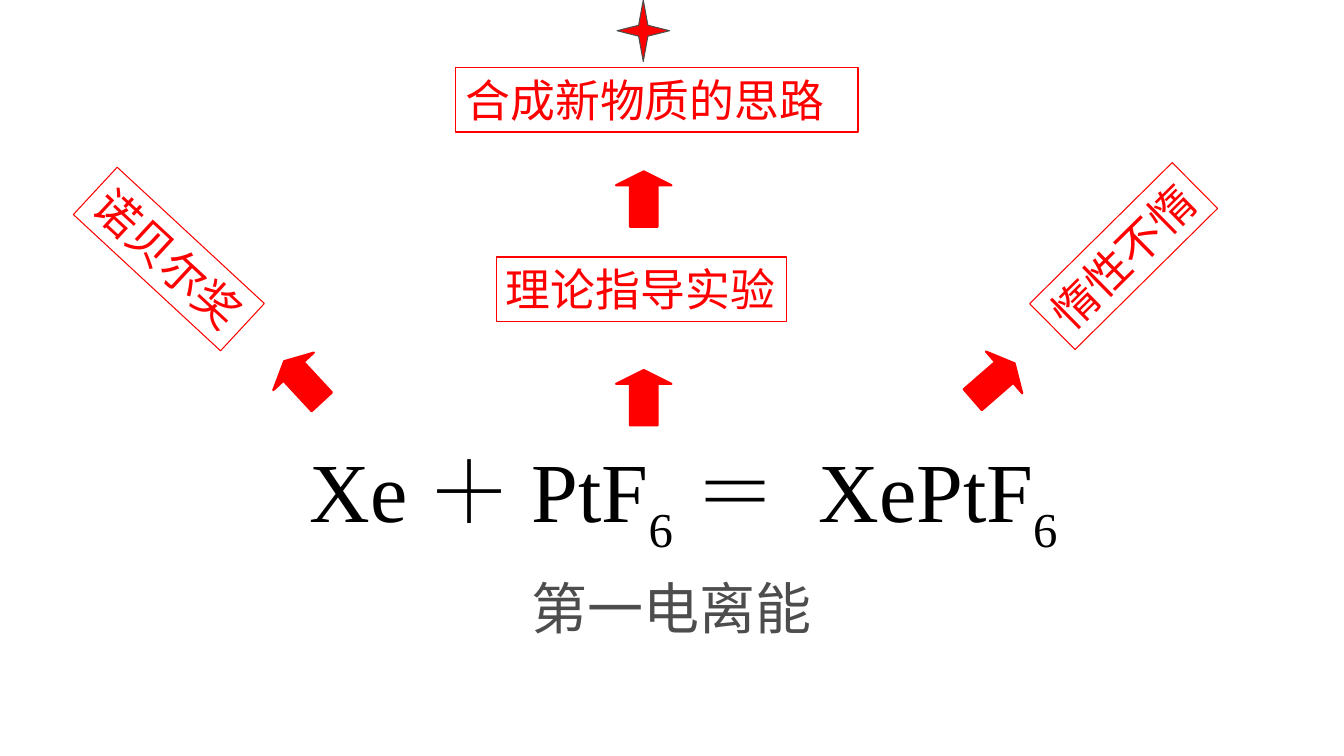
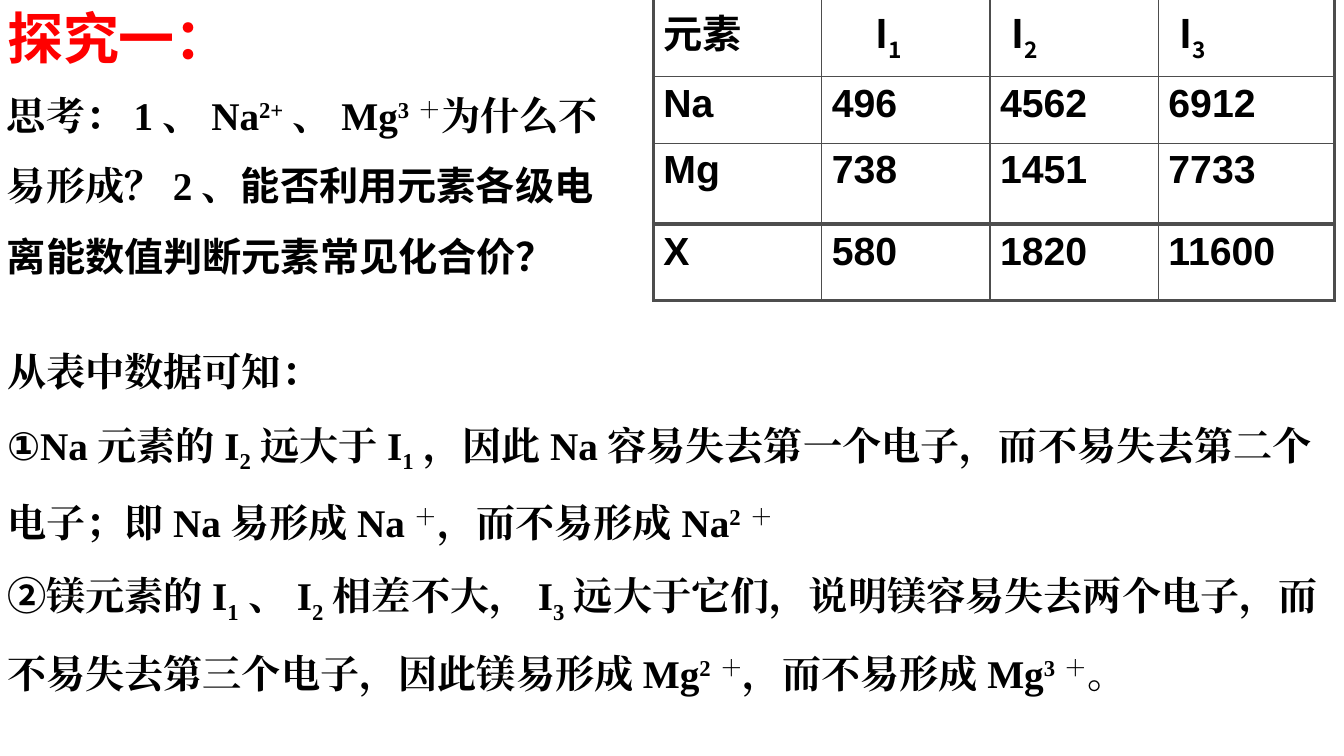
"""Build two chemistry slides on ionisation energy."""
from lxml.etree import SubElement
from pptx import Presentation
from pptx.dml.color import RGBColor
from pptx.enum.shapes import MSO_SHAPE
from pptx.enum.text import MSO_ANCHOR, PP_ALIGN
from pptx.oxml.ns import qn
from pptx.util import Inches, Pt

RED = RGBColor(0xFF, 0x00, 0x00)
GREY = RGBColor(0x4D, 0x4D, 0x4D)
BLACK = RGBColor(0x00, 0x00, 0x00)
WHITE = RGBColor(0xFF, 0xFF, 0xFF)
SANS, SERIF, CJK = "Arial", "Times New Roman", "Noto Sans CJK SC"
BASELINES = {"_": -25000, "^": 30000, "~": -30000}
THIN, THICK = 1, 2.25
EDGE = -0.03

FORMULA = "Xe＋PtF~{6}＝ XePtF~{6}"
QUESTION = "思考：1、Na^{2+}、Mg^{3＋}为什么不易形成？2、@{能否利用元素各级电离能数值判断元素常见化合价？}"
FINDINGS = [
    "从表中数据可知：",
    "@{①}Na元素的I_{2}远大于I_{1}，因此Na容易失去第一个电子，而不易失去第二个电子；"
    "即Na易形成Na^{＋}，而不易形成Na^{2＋}",
    "@{②}镁元素的I_{1}、I_{2}相差不大，I_{3}远大于它们，说明镁容易失去两个电子，"
    "而不易失去第三个电子，因此镁易形成Mg^{2＋}，而不易形成Mg^{3＋}。",
]
ENERGIES = [
    ["元素", "I_{1}", "I_{2}", "I_{3}"],
    ["Na", "496", "4562", "6912"],
    ["Mg", "738", "1451", "7733"],
]
UNKNOWN = [["X", "580", "1820", "11600"]]
COLUMNS = [1.67, 1.67, 1.67, 1.75]
HEADER_INDENTS = [0, 0.43, 0.11, 0.11]


def inches(*lengths):
    """Convert lengths to slide units."""
    return [Inches(length) for length in lengths]


def set_asian_font(properties, name):
    """Use the same font name for East Asian characters."""
    SubElement(properties, qn("a:ea")).set("typeface", name)


def add_span(para, text, mark=""):
    """Add a run, raised, lowered or in the sans font as its mark says."""
    if not text:
        return
    span = para.add_run()
    span.text = text
    if mark == "@":
        span.font.name = SANS
        set_asian_font(span.font._element, SANS)
    elif mark:
        span.font._element.set("baseline", str(BASELINES[mark]))


def write(para, markup, size, color, font=SANS, bold=False):
    """Write marked-up text in one paragraph style."""
    for piece in markup.split("}"):
        plain, brace, marked = piece.partition("{")
        add_span(para, plain[:-1] if brace else plain)
        if brace:
            add_span(para, marked, plain[-1])
    style = para.font
    style.name, style.size, style.bold = font, Pt(size), bold
    style.color.rgb = color
    set_asian_font(para._p.pPr.find(qn("a:defRPr")), font)


def place(holder, left, top, width, height):
    """Move a placeholder."""
    holder.left, holder.top, holder.width, holder.height = inches(left, top, width, height)
    holder.text_frame.vertical_anchor = MSO_ANCHOR.TOP


def remove_bullet(para, hanging=0):
    """Replace the list bullet by a plain hanging indent."""
    properties = para._p.get_or_add_pPr()
    properties.set("marL", str(Inches(hanging)))
    properties.set("indent", str(-Inches(hanging)))
    SubElement(properties, qn("a:buNone"))


def add_text(page, area, markup, size, color, font=SANS, bold=False, wrap=True):
    """Add a text box and return it."""
    box = page.shapes.add_textbox(*inches(*area))
    box.text_frame.word_wrap = wrap
    write(box.text_frame.paragraphs[0], markup, size, color, font, bold)
    return box


def add_label(page, area, text, rotation=0, font=SANS):
    """Add a red outlined label."""
    box = add_text(page, area, text, 32, RED, font, wrap=False)
    box.rotation = rotation
    box.line.color.rgb = RED
    box.line.width = Pt(0.75)
    return box


def add_mark(page, kind, area, line, width, adjustments, rotation=0):
    """Add a red preset shape."""
    mark = page.shapes.add_shape(kind, *inches(*area))
    mark.shadow.inherit = False
    mark.rotation = rotation
    for index, value in enumerate(adjustments):
        mark.adjustments[index] = value
    mark.fill.solid()
    mark.fill.fore_color.rgb = RED
    mark.line.color.rgb = line
    mark.line.width = Pt(width)


def set_borders(cell, weights):
    """Draw the left, right, top and bottom borders of a cell."""
    properties = cell._tc.get_or_add_tcPr()
    for position, (side, weight) in enumerate(zip("LRTB", weights)):
        line = properties.makeelement(qn(f"a:ln{side}"), {"w": str(Pt(weight))})
        fill = SubElement(line, qn("a:solidFill"))
        SubElement(fill, qn("a:srgbClr")).set("val", str(GREY))
        properties.insert(position, line)


def add_grid(page, top, rows, heights, header=False):
    """Add a table with thin inner and thick outer borders."""
    last_row, last_column = len(rows) - 1, len(COLUMNS) - 1
    area = inches(6.48, top, sum(COLUMNS), sum(heights))
    table = page.shapes.add_table(len(rows), len(COLUMNS), *area).table
    for column, width in zip(table.columns, COLUMNS):
        column.width = Inches(width)
    for r, (values, height) in enumerate(zip(rows, heights)):
        table.rows[r].height = Inches(height)
        for c, value in enumerate(values):
            cell = table.cell(r, c)
            cell.fill.solid()
            cell.fill.fore_color.rgb = WHITE
            is_header = header and r == 0
            if is_header:
                cell.margin_left = Inches(0.1 + HEADER_INDENTS[c])
            font = CJK if is_header else SANS
            write(cell.text_frame.paragraphs[0], value, 28, BLACK, font, True)
            outer = (c == 0, c == last_column, r == 0, r == last_row)
            set_borders(cell, [THICK if edge else THIN for edge in outer])


def build_reaction(page):
    """Lay out the reaction and the ideas that it leads to."""
    page.shapes.title._element.getparent().remove(page.shapes.title._element)
    formula = page.placeholders[1]
    place(formula, 2.97, 4.3, 8.27, 1.18)
    para = formula.text_frame.paragraphs[0]
    remove_bullet(para, 0.4)
    para.alignment = PP_ALIGN.JUSTIFY
    para.space_before = Pt(0)
    write(para, FORMULA, 60, BLACK, SERIF)

    add_label(page, (0.68, 2.25, 1.99, 0.64), "诺贝尔奖", 42.8)
    add_label(page, (10.15, 2.22, 1.99, 0.64), "惰性不惰", 315.3)
    add_label(page, (4.92, 2.55, 2.88, 0.64), "理论指导实验")
    idea = add_label(page, (4.52, 0.67, 3.99, 0.64), "合成新物质的思路", font=CJK)
    idea.text_frame.vertical_anchor = MSO_ANCHOR.MIDDLE
    add_text(page, (5.17, 5.64, 2.98, 0.77), "第一电离能", 40, GREY, wrap=False)

    add_mark(page, MSO_SHAPE.STAR_4_POINT, (6.12, 0, 0.52, 0.61), GREY, 0.75, [0.125])
    for left, top, rotation in [(6.11, 1.7, 180), (6.11, 3.67, 180),
                                (9.58, 3.51, 229), (2.73, 3.51, 137.2)]:
        add_mark(page, MSO_SHAPE.DOWN_ARROW, (left, top, 0.55, 0.55),
                 RED, 1.5, [0.5, 0.25], rotation)


def build_inquiry(page):
    """Lay out the question, the energy tables and the findings."""
    title = page.shapes.title
    place(title, EDGE, -0.02, 2.36, 0.77)
    title.text_frame.paragraphs[0].alignment = PP_ALIGN.LEFT
    write(title.text_frame.paragraphs[0], "探究一：", 40, RED, bold=True)

    question = add_text(page, (EDGE, 0.62, 6.27, 2.2), QUESTION, 28, BLACK, SERIF, True)
    question.text_frame.paragraphs[0].line_spacing = 1.5

    findings = page.placeholders[1]
    place(findings, EDGE, 3.16, 13.39, 3.6)
    frame = findings.text_frame
    for index, finding in enumerate(FINDINGS):
        para = frame.add_paragraph() if index else frame.paragraphs[0]
        remove_bullet(para)
        para.line_spacing = 1.5
        para.space_before = Pt(0)
        write(para, finding, 28, BLACK, SERIF, True)

    add_grid(page, -0.02, ENERGIES, [0.78, 0.66, 0.8], header=True)
    add_grid(page, 2.23, UNKNOWN, [0.75])


def main():
    """Build and save the deck."""
    deck = Presentation()
    deck.slide_width, deck.slide_height = inches(13.33, 7.5)
    for build in (build_reaction, build_inquiry):
        build(deck.slides.add_slide(deck.slide_layouts[1]))
    deck.save("out.pptx")


if __name__ == "__main__":
    main()
